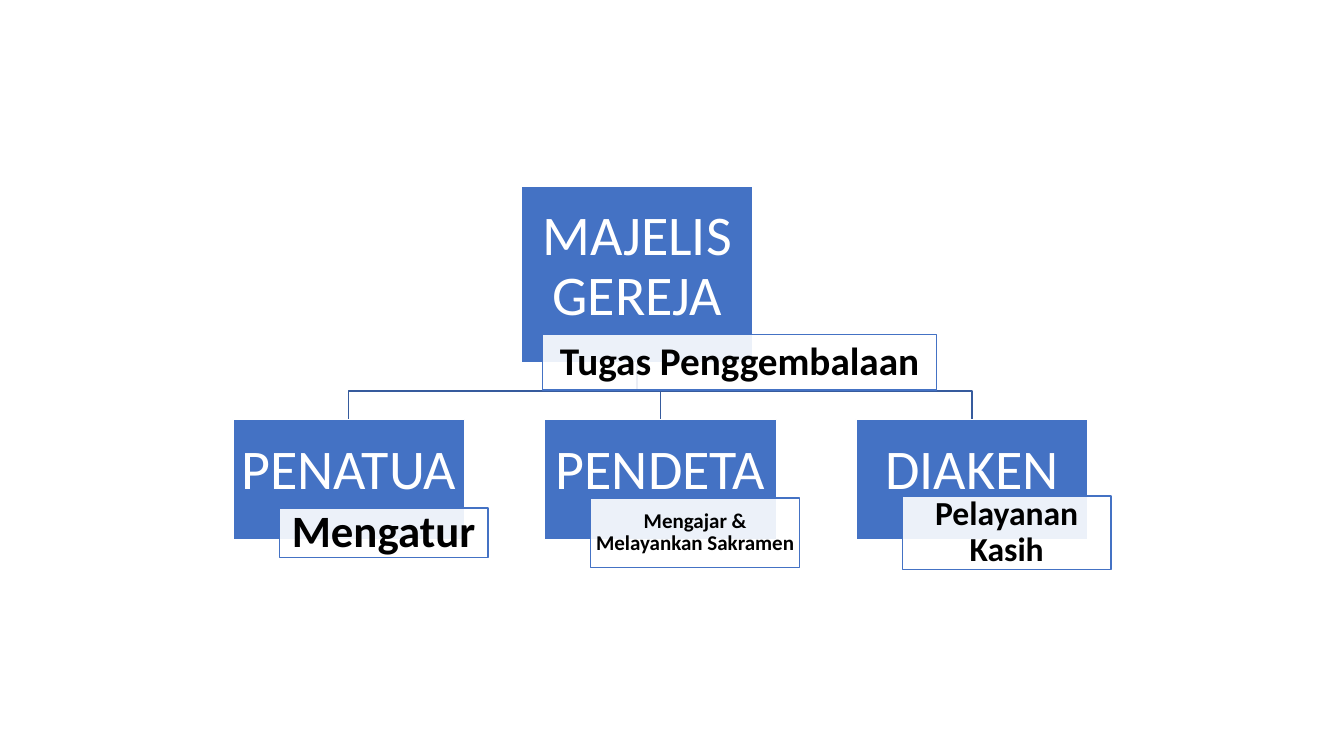
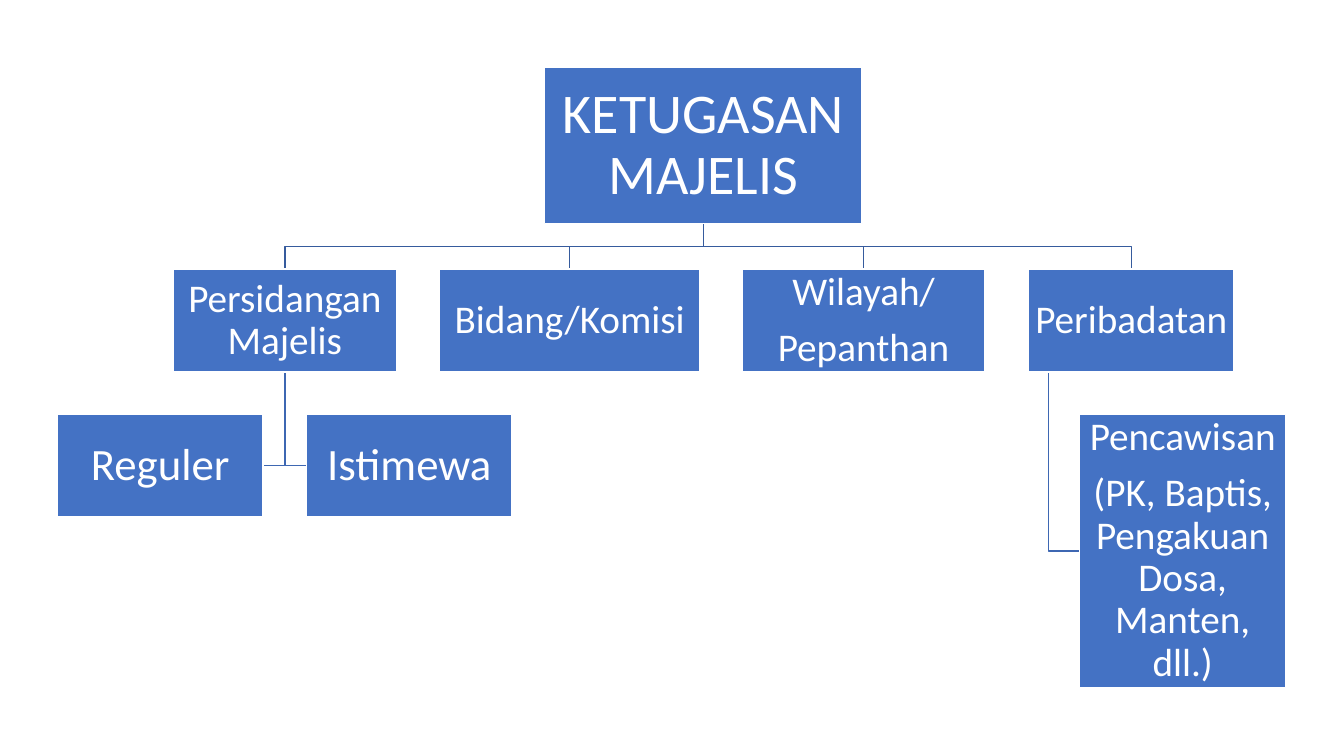
from dataclasses import dataclass

from lxml import etree
from pptx import Presentation
from pptx.dml.color import RGBColor
from pptx.enum.shapes import MSO_SHAPE
from pptx.enum.text import MSO_ANCHOR, PP_ALIGN
from pptx.oxml.ns import qn
from pptx.util import Inches, Pt

FONT = "Calibri"
BLUE = RGBColor(0x44, 0x72, 0xC4)
BRANCH_BLUE = RGBColor(0x36, 0x5B, 0x9D)
HANGER_BLUE = RGBColor(0x3E, 0x67, 0xB2)
WHITE = RGBColor(0xFF, 0xFF, 0xFF)
BLACK = RGBColor(0x00, 0x00, 0x00)


@dataclass(frozen=True)
class Box:
    text: str
    size: int
    left: float
    top: float
    width: float
    height: float

    @property
    def center(self) -> float:
        return self.left + self.width / 2

    @property
    def middle(self) -> float:
        return self.top + self.height / 2

    @property
    def right(self) -> float:
        return self.left + self.width

    @property
    def bottom(self) -> float:
        return self.top + self.height


@dataclass(frozen=True)
class Style:
    fill: RGBColor
    line: RGBColor
    color: RGBColor
    bold: bool = False
    opacity: int = 100
    inset: float = 0.02
    inset_bottom: float = 0.02


NODE = Style(BLUE, WHITE, WHITE)
TITLED_NODE = Style(BLUE, WHITE, WHITE, inset=0.03, inset_bottom=0.17)
LABEL = Style(WHITE, BLUE, BLACK, bold=True, opacity=90, inset=0.04)


def draw_box(slide, box: Box, style: Style) -> None:
    s = slide.shapes.add_shape(
        MSO_SHAPE.RECTANGLE, Inches(box.left), Inches(box.top),
        Inches(box.width), Inches(box.height))
    s.shadow.inherit = False
    s.fill.solid()
    s.fill.fore_color.rgb = style.fill
    if style.opacity < 100:
        color = s._element.spPr.find(qn("a:solidFill"))[0]
        etree.SubElement(color, qn("a:alpha")).set("val", str(style.opacity * 1000))
    s.line.color.rgb = style.line
    s.line.width = Pt(1)

    tf = s.text_frame
    tf.word_wrap = True
    tf.vertical_anchor = MSO_ANCHOR.MIDDLE
    tf.margin_left = tf.margin_right = Inches(style.inset)
    tf.margin_top = Inches(0.02)
    tf.margin_bottom = Inches(style.inset_bottom)
    tf.text = box.text
    for p in tf.paragraphs:
        p.alignment = PP_ALIGN.CENTER
        p.line_spacing = 0.9
        for r in p.runs:
            r.font.name = FONT
            r.font.size = Pt(box.size)
            r.font.bold = style.bold
            r.font.color.rgb = style.color
    for p in tf.paragraphs[:-1]:
        p.space_after = Pt(0.35 * box.size)


def draw_path(slide, points: list[tuple[float, float]], color: RGBColor) -> None:
    start, *rest = [(Inches(x), Inches(y)) for x, y in points]
    builder = slide.shapes.build_freeform(*start)
    builder.add_line_segments(rest, close=False)
    s = builder.convert_to_shape()
    s.shadow.inherit = False
    s.fill.background()
    s.line.color.rgb = color
    s.line.width = Pt(1)


def draw_branches(slide, parent: Box, children: list[Box]) -> None:
    """Lead from under the parent to the top of each child."""
    for child in children:
        bend = (parent.bottom + child.top) / 2
        draw_path(slide, [(parent.center, parent.bottom), (parent.center, bend),
                          (child.center, bend), (child.center, child.top)], BRANCH_BLUE)


def draw_hanger(slide, x: float, parent: Box, child: Box) -> None:
    """Drop from the parent at x and turn to the near side of the child."""
    side = child.left if child.left > x else child.right
    draw_path(slide, [(x, parent.bottom), (x, child.middle), (side, child.middle)],
              HANGER_BLUE)


def build_council_slide(slide) -> None:
    root = Box("MAJELIS GEREJA", 40, 5.17, 1.85, 2.3, 1.75)
    root_label = Box("Tugas Penggembalaan", 28, 5.38, 3.32, 3.91, 0.55)

    # Offices with their duties: title, duty, duty size, label top and height
    offices = [
        ("PENATUA", "Mengatur", 32, 5.04, 0.49),
        ("PENDETA", "Mengajar & Melayankan Sakramen", 15, 4.94, 0.69),
        ("DIAKEN", "Pelayanan Kasih", 24, 4.92, 0.73),
    ]
    nodes, labels = [], []
    for i, (title, duty, size, top, height) in enumerate(offices):
        left = 2.31 + 3.09 * i
        nodes.append(Box(title, 40, left, 4.16, 2.3, 1.19))
        labels.append(Box(duty, size, left + 0.46, top, 2.07, height))

    draw_branches(slide, root, nodes)
    for node, label in zip([root, *nodes], [root_label, *labels]):
        draw_box(slide, node, TITLED_NODE)
        draw_box(slide, label, LABEL)


def build_duties_slide(slide) -> None:
    root = Box("KETUGASAN MAJELIS", 40, 5.4, 0.67, 3.15, 1.55)

    # Second level: one row
    row = [
        Box(text, 28, left, 2.67, width, 1.02)
        for text, left, width in [
            ("Persidangan Majelis", 1.72, 2.21),
            ("Bidang/Komisi", 4.36, 2.58),
            ("Wilayah/\nPepanthan", 7.36, 2.41),
            ("Peribadatan", 10.2, 2.04),
        ]
    ]
    meeting, worship = row[0], row[-1]

    # Third level
    sessions = [Box(text, 32, left, 4.11, 2.04, 1.02)
                for text, left in [("Reguler", 0.57), ("Istimewa", 3.04)]]
    rites = Box("Pencawisan\n(PK, Baptis, Pengakuan Dosa, Manten, dll.)",
                28, 10.71, 4.11, 2.04, 2.71)

    for session in sessions:
        draw_hanger(slide, meeting.center, meeting, session)
    draw_hanger(slide, worship.left + 0.2, worship, rites)
    draw_branches(slide, root, row)
    for box in [root, *row, *sessions, rites]:
        draw_box(slide, box, NODE)


def main() -> None:
    prs = Presentation()
    prs.slide_width = Inches(13.33)
    prs.slide_height = Inches(7.5)
    for build in (build_council_slide, build_duties_slide):
        build(prs.slides.add_slide(prs.slide_layouts[6]))
    prs.save("out.pptx")


if __name__ == "__main__":
    main()
